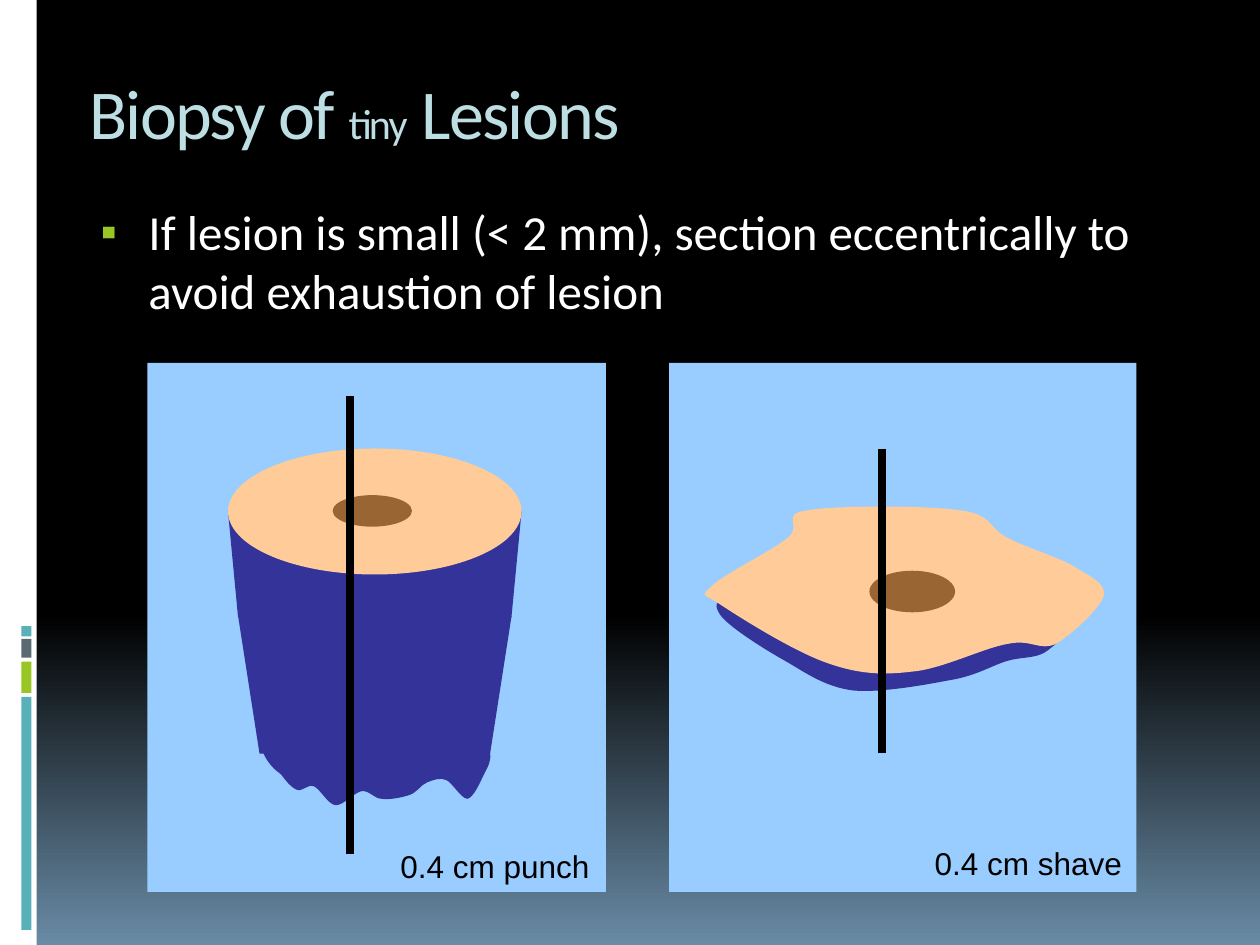
from copy import deepcopy

from lxml import etree
from pptx import Presentation
from pptx import util as u
from pptx.dml.color import RGBColor
from pptx.enum import shapes, text
from pptx.oxml.ns import qn

INK = "000000"
PANEL = "99CCFF"
DEEP_TISSUE = "333399"
SKIN = "FFCC99"
LESION = "996633"
TEAL = "59B0B9"
GREEN = "98C723"

RECT = shapes.MSO_SHAPE.RECTANGLE
OVAL = shapes.MSO_SHAPE.OVAL

# Curved outlines: a start point, then two control points and an end point per curve.
PUNCH_BASE = [
    (3.89, 5.98),
    (3.9, 6.04), (3.87, 6.09), (3.84, 6.15),
    (3.81, 6.21), (3.76, 6.33), (3.71, 6.34),
    (3.66, 6.34), (3.59, 6.21), (3.54, 6.19),
    (3.49, 6.17), (3.44, 6.19), (3.39, 6.21),
    (3.34, 6.23), (3.31, 6.29), (3.25, 6.31),
    (3.19, 6.33), (3.09, 6.35), (3.03, 6.34),
    (2.97, 6.34), (2.93, 6.27), (2.87, 6.28),
    (2.81, 6.29), (2.72, 6.4), (2.66, 6.39),
    (2.6, 6.38), (2.54, 6.26), (2.49, 6.24),
    (2.44, 6.22), (2.39, 6.3), (2.34, 6.26),
    (2.28, 6.23), (2.19, 6.09), (2.16, 6.03),
    (2.13, 5.98), (2.14, 5.98), (2.15, 5.95),
    (2.16, 5.92), (2.14, 5.9), (2.21, 5.86),
    (2.28, 5.82), (2.36, 5.77), (2.57, 5.73),
    (2.78, 5.69), (3.26, 5.61), (3.46, 5.61),
    (3.67, 5.61), (3.71, 5.68), (3.78, 5.74),
    (3.85, 5.8), (3.88, 5.91), (3.89, 5.98),
]
SHAVE_BASE = [
    (5.71, 4.87),
    (5.76, 4.96), (6.06, 5.15), (6.24, 5.25),
    (6.41, 5.35), (6.55, 5.45), (6.77, 5.48),
    (6.98, 5.5), (7.32, 5.44), (7.53, 5.4),
    (7.73, 5.37), (7.86, 5.29), (7.98, 5.25),
    (8.11, 5.21), (8.2, 5.23), (8.29, 5.18),
    (8.37, 5.13), (8.49, 5.01), (8.51, 4.95),
    (8.54, 4.88), (8.64, 4.85), (8.44, 4.8),
    (8.23, 4.75), (7.72, 4.66), (7.3, 4.64),
    (6.88, 4.63), (6.2, 4.68), (5.93, 4.72),
    (5.67, 4.76), (5.66, 4.78), (5.71, 4.87),
]
SHAVE_TOP = [
    (5.65, 4.65),
    (5.74, 4.56), (6.13, 4.37), (6.25, 4.27),
    (6.38, 4.17), (6.18, 4.08), (6.41, 4.05),
    (6.63, 4.01), (7.35, 4.01), (7.62, 4.05),
    (7.88, 4.08), (7.85, 4.2), (8, 4.27),
    (8.15, 4.35), (8.4, 4.42), (8.53, 4.5),
    (8.66, 4.58), (8.78, 4.63), (8.76, 4.73),
    (8.73, 4.83), (8.5, 5.04), (8.38, 5.11),
    (8.25, 5.17), (8.19, 5.07), (8, 5.11),
    (7.81, 5.14), (7.48, 5.31), (7.24, 5.33),
    (7, 5.36), (6.81, 5.35), (6.56, 5.26),
    (6.3, 5.17), (5.87, 4.9), (5.72, 4.8),
    (5.57, 4.7), (5.56, 4.74), (5.65, 4.65),
]


def color(value):
    return RGBColor.from_string(value)


def paint(shape, fill):
    shape.shadow.inherit = False
    shape.fill.solid()
    shape.fill.fore_color.rgb = color(fill)
    shape.line.fill.background()


def add_preset(parent, kind, left, top, width, height, fill):
    shape = parent.shapes.add_shape(kind, *map(u.Inches, (left, top, width, height)))
    paint(shape, fill)


def add_outline(parent, points, fill):
    corners = [(u.Inches(x), u.Inches(y)) for x, y in points]
    builder = parent.shapes.build_freeform(*corners[0])
    builder.add_line_segments(corners[1:], close=True)
    shape = builder.convert_to_shape()
    paint(shape, fill)
    return shape


def add_curved_outline(parent, points, fill):
    """Join the end points, then bend each straight side with its control points."""
    shape = add_outline(parent, points[::3], fill)
    sides = shape.element.findall(".//" + qn("a:lnTo"))
    for i, side in enumerate(sides):
        side.tag = qn("a:cubicBezTo")
        controls = points[3 * i + 1:3 * i + 3]
        for place, (x, y) in enumerate(controls):
            side.insert(place, etree.Element(qn("a:pt"), x=str(u.Inches(x) - shape.left),
                                             y=str(u.Inches(y) - shape.top)))


def add_cut_line(page, x, top, bottom):
    line = page.shapes.add_connector(shapes.MSO_CONNECTOR.STRAIGHT,
                                     *map(u.Inches, (x, top, x, bottom)))
    line.line.color.rgb = color(INK)
    line.line.width = u.Pt(4.5)
    etree.SubElement(line.element.spPr, qn("a:effectLst"))


def add_span(para, words, size, font, ink):
    span = para.add_run()
    span.text = words
    span.font.size = u.Pt(size)
    span.font.name = font
    span.font.color.rgb = color(ink)
    return span


def add_label(page, words, left, top, width):
    box = page.shapes.add_textbox(*map(u.Inches, (left, top, width, 0.4)))
    box.text_frame.word_wrap = False
    box.text_frame.auto_size = text.MSO_AUTO_SIZE.SHAPE_TO_FIT_TEXT
    add_span(box.text_frame.paragraphs[0], words, 18, "Arial", INK)


def set_background(page):
    fill = page.background.fill
    fill.gradient()
    fill.gradient_angle = 270
    stops = page.element.find(".//" + qn("a:gsLst"))
    stops.insert(0, deepcopy(stops[0]))
    for stop, (position, value) in zip(fill.gradient_stops,
                                       ((0, INK), (0.65, INK), (1, "698BA5"))):
        stop.position = position
        stop.color.rgb = color(value)


def add_sidebar(page):
    add_preset(page, RECT, 0, 0, 0.29, 7.5, "FFFFFF")
    for top, height, fill in ((5.53, 1.85, TEAL), (5.25, 0.25, GREEN),
                              (5.07, 0.15, "5B6973"), (4.97, 0.08, TEAL)):
        add_preset(page, RECT, 0.17, top, 0.08, height, fill)


def fill_title(page):
    title = page.shapes.title
    title.left, title.top, title.width, title.height = map(u.Inches, (0.61, 0.5, 8.89, 1))
    title.text_frame.vertical_anchor = text.MSO_ANCHOR.TOP
    para = title.text_frame.paragraphs[0]
    para.alignment = text.PP_ALIGN.LEFT
    for words, size in (("Biopsy of ", 40), ("tiny", 24), (" Lesions", 40)):
        span = add_span(para, words, size, "Calibri", "BDDFE3")
        span.font._element.set("spc", "-100")


def add_bullet_text(page, words):
    box = page.shapes.add_textbox(*map(u.Inches, (0.62, 1.55, 8.88, 1.42)))
    box.text_frame.word_wrap = True
    para = box.text_frame.paragraphs[0]
    props = para._p.get_or_add_pPr()
    props.set("marL", str(u.Inches(0.46)))
    props.set("indent", str(u.Inches(-0.38)))
    bullet_color = etree.SubElement(props, qn("a:buClr"))
    etree.SubElement(bullet_color, qn("a:srgbClr"), val=GREEN)
    etree.SubElement(props, qn("a:buSzPct"), val="95000")
    etree.SubElement(props, qn("a:buFont"), typeface="Arial")
    etree.SubElement(props, qn("a:buChar"), char="▪")
    add_span(para, words, 28, "Calibri", "FFFFFF")


def draw_punch(page):
    add_preset(page, RECT, 1.17, 2.88, 3.64, 4.2, PANEL)
    body = page.shapes.add_group_shape()
    add_outline(body, [(1.89, 4.89), (2.06, 5.98), (3.89, 5.98), (4.06, 4.89)], DEEP_TISSUE)
    add_outline(body, [(1.81, 4.06), (1.89, 4.9), (4.06, 4.9), (4.14, 4.06)], DEEP_TISSUE)
    add_preset(body, OVAL, 2.06, 5.44, 0.83, 0.78, DEEP_TISSUE)
    add_curved_outline(body, PUNCH_BASE, DEEP_TISSUE)
    add_preset(page, OVAL, 1.81, 3.56, 2.33, 1, SKIN)
    add_preset(page, OVAL, 2.64, 3.93, 0.63, 0.25, LESION)
    add_cut_line(page, 2.78, 3.14, 6.78)
    add_label(page, "0.4 cm punch", 3.08, 6.67, 1.72)


def draw_shave(page):
    add_preset(page, RECT, 5.31, 2.88, 3.71, 4.2, PANEL)
    add_curved_outline(page, SHAVE_BASE, DEEP_TISSUE)
    add_curved_outline(page, SHAVE_TOP, SKIN)
    add_preset(page, OVAL, 6.9, 4.53, 0.68, 0.33, LESION)
    add_cut_line(page, 7, 3.56, 5.98)
    add_label(page, "0.4 cm shave", 7.32, 6.65, 1.7)


def main():
    deck = Presentation()
    deck.slide_width, deck.slide_height = u.Inches(10), u.Inches(7.5)
    page = deck.slides.add_slide(deck.slide_layouts[5])
    set_background(page)
    add_sidebar(page)
    fill_title(page)
    add_bullet_text(page, "If lesion is small (< 2 mm), section eccentrically to "
                          "avoid exhaustion of lesion")
    draw_punch(page)
    draw_shave(page)
    deck.save("out.pptx")


if __name__ == "__main__":
    main()
